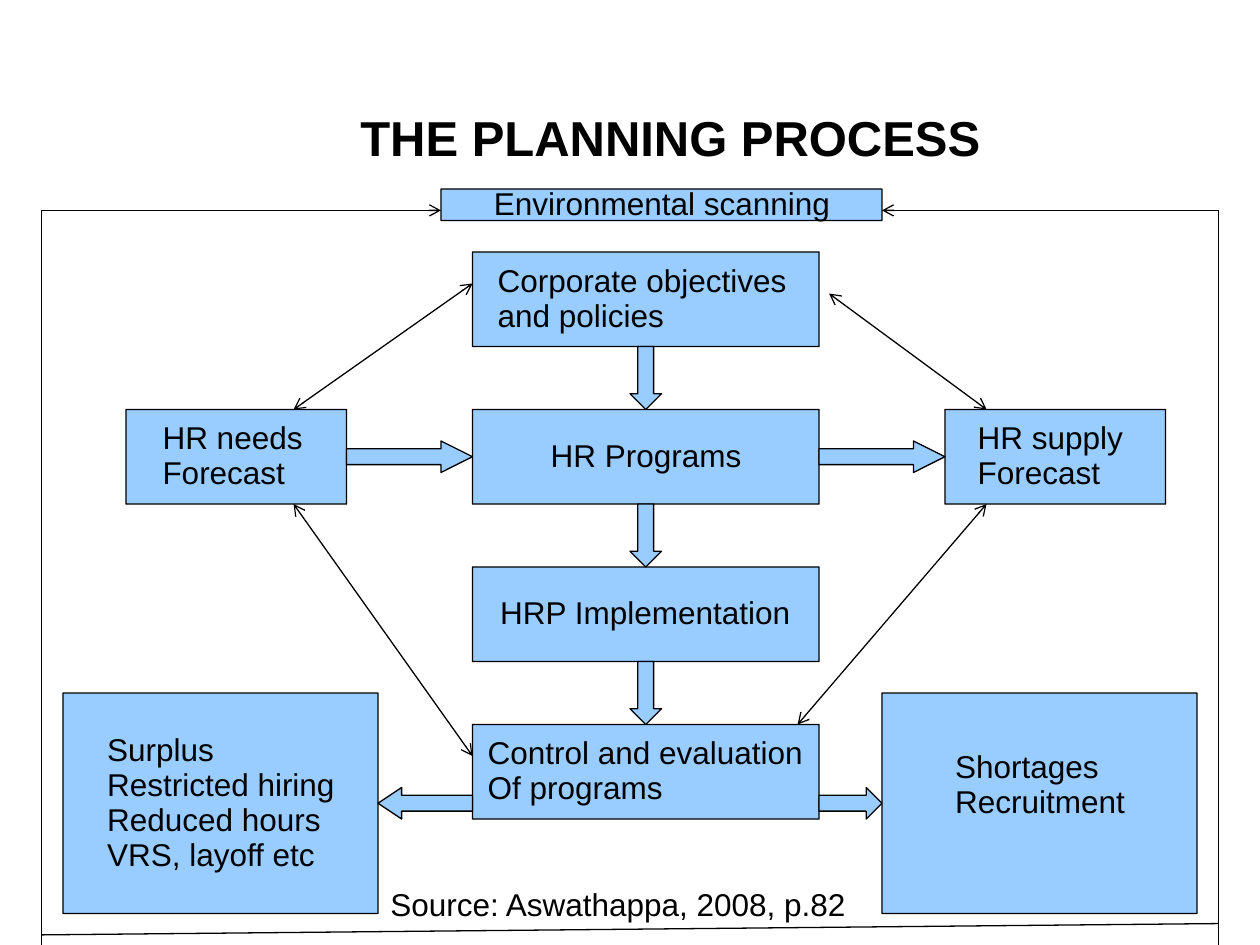
"""Build a slide that charts the human resource planning process."""
from lxml import etree
from pptx import Presentation
from pptx.dml.color import RGBColor
from pptx.enum.shapes import MSO_CONNECTOR, MSO_SHAPE
from pptx.enum.text import MSO_ANCHOR, MSO_AUTO_SIZE, PP_ALIGN
from pptx.oxml.ns import qn
from pptx.util import Inches, Pt

BLUE = RGBColor(0x99, 0xCC, 0xFF)
BLACK = RGBColor(0, 0, 0)
BOX = MSO_SHAPE.ROUNDED_RECTANGLE
RIGHT = MSO_SHAPE.RIGHT_ARROW
LEFT = MSO_SHAPE.LEFT_ARROW
DOWN = MSO_SHAPE.DOWN_ARROW
STRAIGHT = MSO_CONNECTOR.STRAIGHT
MIDDLE = MSO_ANCHOR.MIDDLE
TOP = MSO_ANCHOR.TOP
FIXED = MSO_AUTO_SIZE.NONE
START = PP_ALIGN.LEFT
CENTER = PP_ALIGN.CENTER


def write(frame, lines):
    frame.word_wrap = False
    frame.text = "\n".join(lines)
    for para in frame.paragraphs:
        para.alignment = START
        para.line_spacing = 0.93
        para.font.name = "Arial"
        para.font.size = Pt(18)
        para.font.color.rgb = BLACK


def draw(kind, area, adjust):
    shape = slide.shapes.add_shape(kind, *map(Inches, area))
    for i, value in enumerate(adjust):
        shape.adjustments[i] = value
    shape.shadow.inherit = False
    shape.fill.solid()
    shape.fill.fore_color.rgb = BLUE
    shape.line.color.rgb = BLACK
    shape.line.width = Pt(0.75)
    return shape


prs = Presentation()
prs.slide_width, prs.slide_height = Inches(10), Inches(7.5)
slide = prs.slides.add_slide(prs.slide_layouts[5])

title = slide.shapes.title
title.left, title.top = Inches(2.14), Inches(0.75)
title.width, title.height = Inches(6.36), Inches(0.62)
frame = title.text_frame
frame.text = "THE PLANNING PROCESS"
frame.auto_size = FIXED
frame.vertical_anchor = TOP
frame.margin_top = Inches(0.1)
head = frame.paragraphs[0]
head.alignment = CENTER
head.font.name = "Arial"
head.font.size = Pt(28)
head.font.bold = True
head.font.color.rgb = BLACK

mid, wide, tall, step = 3.75, 2.75, 0.75, 1.25
steps = [
    (0.2, ["Corporate objectives", "and policies"]),
    (0.62, ["HR Programs"]),
    (0.22, ["HRP Implementation"]),
    (0.12, ["Control and evaluation", "Of programs"]),
]
boxes = [((mid, 2 + i * step, wide, tall), *item) for i, item in enumerate(steps)]
boxes += [
    ((3.5, 1.5, 3.5, 0.25), 0.42, ["Environmental scanning"]),
    ((1, 3.25, 1.75, tall), 0.29, ["HR needs", "Forecast"]),
    ((7.5, 3.25, 1.75, tall), 0.26, ["HR supply", "Forecast"]),
    ((0.5, 5.5, 2.5, 1.75), 0.35,
     ["Surplus", "Restricted hiring", "Reduced hours", "VRS, layoff etc"]),
    ((7, 5.5, 2.5, 1.75), 0.58, ["Shortages", "Recruitment"]),
]
for area, inset, lines in boxes:
    frame = draw(BOX, area, [0.001]).text_frame
    frame.vertical_anchor = MIDDLE
    frame.margin_left = Inches(inset)
    frame.margin_right = 0
    write(frame, lines)
frame.margin_bottom = Inches(0.33)

arrows = [(DOWN, (5, 2.75 + i * step, 0.25, 0.5), 0.5) for i in range(3)]
arrows += [
    (RIGHT, (2.75, 3.5, 1, 0.25), 1),
    (RIGHT, (6.5, 3.5, 1, 0.25), 1),
    (LEFT, (3, 6.25, 0.75, 0.25), 0.75),
    (RIGHT, (6.5, 6.25, 0.5, 0.25), 0.5),
]
for kind, area, tip in arrows:
    draw(kind, area, [0.5, tip])

note = slide.shapes.add_textbox(Inches(3), Inches(7), Inches(4.5), Inches(0.38))
write(note.text_frame, ["Source: Aswathappa, 2008, p.82"])
note.text_frame.word_wrap = True

BOTH, END, PLAIN = ("headEnd", "tailEnd"), ("tailEnd",), ()
west, east, top, base = 0.33, 9.67, 1.67, 7.5
links = [
    (3.75, 2.25, 2.33, 3.25, BOTH),
    (6.58, 2.33, 7.83, 3.25, BOTH),
    (2.33, 4, 3.75, 6, BOTH),
    (6.33, 5.75, 7.83, 4, BOTH),
    (east, top, 7, top, END),
    (west, top, 3.5, top, END),
    (east, top, east, base, PLAIN),
    (east, 7.33, west, 7.42, PLAIN),
    (west, base, west, top, PLAIN),
]
for *ends, tips in links:
    link = slide.shapes.add_connector(STRAIGHT, *map(Inches, ends))
    link.line.color.rgb = BLACK
    link.line.width = Pt(0.75)
    props = link._element.spPr
    for tip in tips:
        etree.SubElement(props.find(qn("a:ln")), qn("a:" + tip), type="arrow")
    etree.SubElement(props, qn("a:effectLst"))

prs.save("out.pptx")
